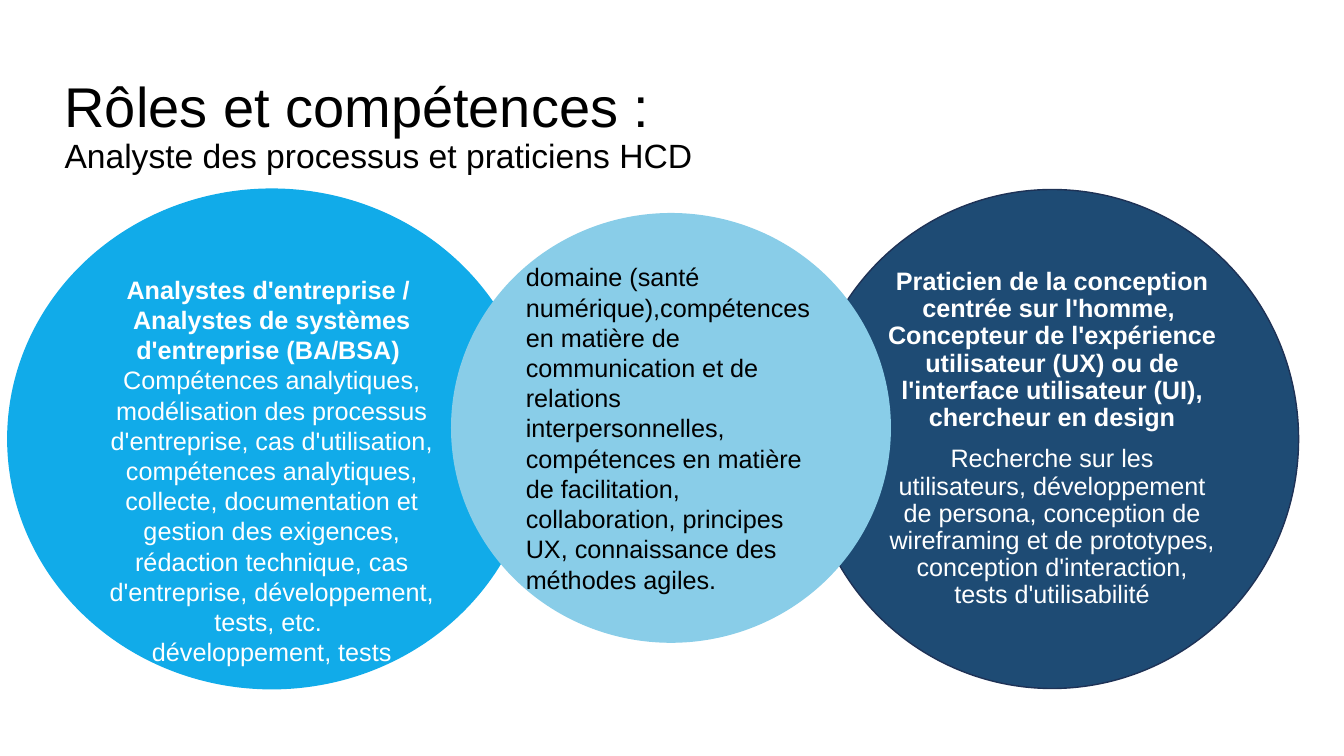
from dataclasses import dataclass

from pptx import Presentation
from pptx.dml.color import RGBColor
from pptx.enum.shapes import MSO_SHAPE
from pptx.enum.text import MSO_ANCHOR, MSO_AUTO_SIZE, PP_ALIGN
from pptx.util import Inches, Pt

OVAL = MSO_SHAPE.OVAL
TOP, MIDDLE = MSO_ANCHOR.TOP, MSO_ANCHOR.MIDDLE
LEFT, CENTER = PP_ALIGN.LEFT, PP_ALIGN.CENTER
NO_AUTOFIT = MSO_AUTO_SIZE.NONE
TITLE_ONLY_LAYOUT = 5
SLIDE_WIDTH, SLIDE_HEIGHT = Inches(13.33), Inches(7.5)


@dataclass(frozen=True)
class Theme:
    font: str = "Arial"
    title_size: int = 40
    subtitle_size: int = 24
    body_size: int = 18
    dark: str = "000000"
    light: str = "FFFFFF"
    analyst: str = "11ABE9"
    shared: str = "89CDE8"
    designer: str = "1E4B74"
    designer_line: str = "1E3256"


THEME = Theme()


@dataclass(frozen=True)
class Box:
    """Position and size in percent of the slide."""
    left: float
    top: float
    width: float
    height: float


@dataclass(frozen=True)
class Passage:
    text: str
    bold: bool = False
    space_before: int = 0


@dataclass(frozen=True)
class Circle:
    box: Box
    fill: str
    line: str | None
    text_color: str
    passages: tuple[Passage, ...]
    alignment: PP_ALIGN = CENTER
    anchor: MSO_ANCHOR = MIDDLE
    line_spacing: float = 1.0
    top_inset: float = 0.05


TITLE_BOX = Box(4.05, 5.47, 82.75, 22.8)
TITLE_LINES = (
    ("Rôles et compétences : ", THEME.title_size),
    ("Analyste des processus et praticiens HCD", THEME.subtitle_size),
)

CIRCLES = (
    Circle(
        Box(0.53, 24.93, 39.38, 66.27), THEME.analyst, None, THEME.light,
        (
            Passage("Analystes d'entreprise / ", bold=True),
            Passage("Analystes de systèmes d'entreprise (BA/BSA) ", bold=True),
            Passage("Compétences analytiques, modélisation des processus "
                    "d'entreprise, cas d'utilisation, compétences analytiques, "
                    "collecte, documentation et gestion des exigences, "
                    "rédaction technique, cas d'entreprise, développement, "
                    "tests, etc. \ndéveloppement, tests"),
        ),
        anchor=TOP, top_inset=0.12,
    ),
    Circle(
        Box(59.94, 25.07, 36.68, 66), THEME.designer, THEME.designer_line, THEME.light,
        (
            Passage("Praticien de la conception centrée sur l'homme, \n"
                    "Concepteur de l'expérience utilisateur (UX) ou de "
                    "l'interface utilisateur (UI), chercheur en design", bold=True),
            Passage("Recherche sur les utilisateurs, développement de persona, "
                    "conception de wireframing et de prototypes, conception "
                    "d'interaction, tests d'utilisabilité", space_before=10),
        ),
        line_spacing=0.9,
    ),
    Circle(
        Box(33.61, 28.27, 32.63, 56.67), THEME.shared, THEME.shared, THEME.dark,
        (
            Passage("domaine (santé numérique),compétences en matière de "
                    "communication et de relations interpersonnelles, "
                    "compétences en matière de facilitation, collaboration, "
                    "principes UX, connaissance des méthodes agiles."),
        ),
        alignment=LEFT,
    ),
)


def apply_format(target: object, values: dict[str, object]) -> None:
    for name, value in values.items():
        setattr(target, name, value)


def box_format(box: Box) -> dict[str, object]:
    return {
        "left": round(SLIDE_WIDTH * box.left / 100),
        "top": round(SLIDE_HEIGHT * box.top / 100),
        "width": round(SLIDE_WIDTH * box.width / 100),
        "height": round(SLIDE_HEIGHT * box.height / 100),
    }


def format_font(font: object, size: int, color: str, bold: bool = False) -> None:
    apply_format(font, {"name": THEME.font, "size": Pt(size), "bold": bold})
    font.color.rgb = RGBColor.from_string(color)


def fill_title(title: object) -> None:
    apply_format(title, box_format(TITLE_BOX))
    frame = title.text_frame
    apply_format(frame, {"word_wrap": True, "auto_size": NO_AUTOFIT,
                         "vertical_anchor": MIDDLE})
    paragraph = frame.paragraphs[0]
    apply_format(paragraph, {"alignment": LEFT, "line_spacing": 0.9})
    for index, (text, size) in enumerate(TITLE_LINES):
        if index:
            paragraph.add_line_break()
        run = paragraph.add_run()
        run.text = text
        format_font(run.font, size, THEME.dark)


def draw_circle(slide: object, circle: Circle) -> None:
    shape = slide.shapes.add_shape(OVAL, **box_format(circle.box))
    shape.shadow.inherit = False
    shape.fill.solid()
    shape.fill.fore_color.rgb = RGBColor.from_string(circle.fill)
    if circle.line:
        shape.line.color.rgb = RGBColor.from_string(circle.line)
        shape.line.width = Pt(1)
    else:
        shape.line.fill.background()

    frame = shape.text_frame
    apply_format(frame, {"word_wrap": True, "vertical_anchor": circle.anchor,
                         "margin_top": Inches(circle.top_inset)})
    for index, passage in enumerate(circle.passages):
        paragraph = frame.add_paragraph() if index else frame.paragraphs[0]
        paragraph.text = passage.text
        apply_format(paragraph, {"alignment": circle.alignment,
                                 "line_spacing": circle.line_spacing,
                                 "space_before": Pt(passage.space_before)})
        for run in paragraph.runs:
            format_font(run.font, THEME.body_size, circle.text_color, passage.bold)


def main() -> None:
    presentation = Presentation()
    apply_format(presentation, {"slide_width": SLIDE_WIDTH, "slide_height": SLIDE_HEIGHT})
    slide = presentation.slides.add_slide(presentation.slide_layouts[TITLE_ONLY_LAYOUT])

    # Heading
    fill_title(slide.shapes.title)

    # Overlapping roles, the shared skills in front
    for circle in CIRCLES:
        draw_circle(slide, circle)

    presentation.save("out.pptx")


if __name__ == "__main__":
    main()
